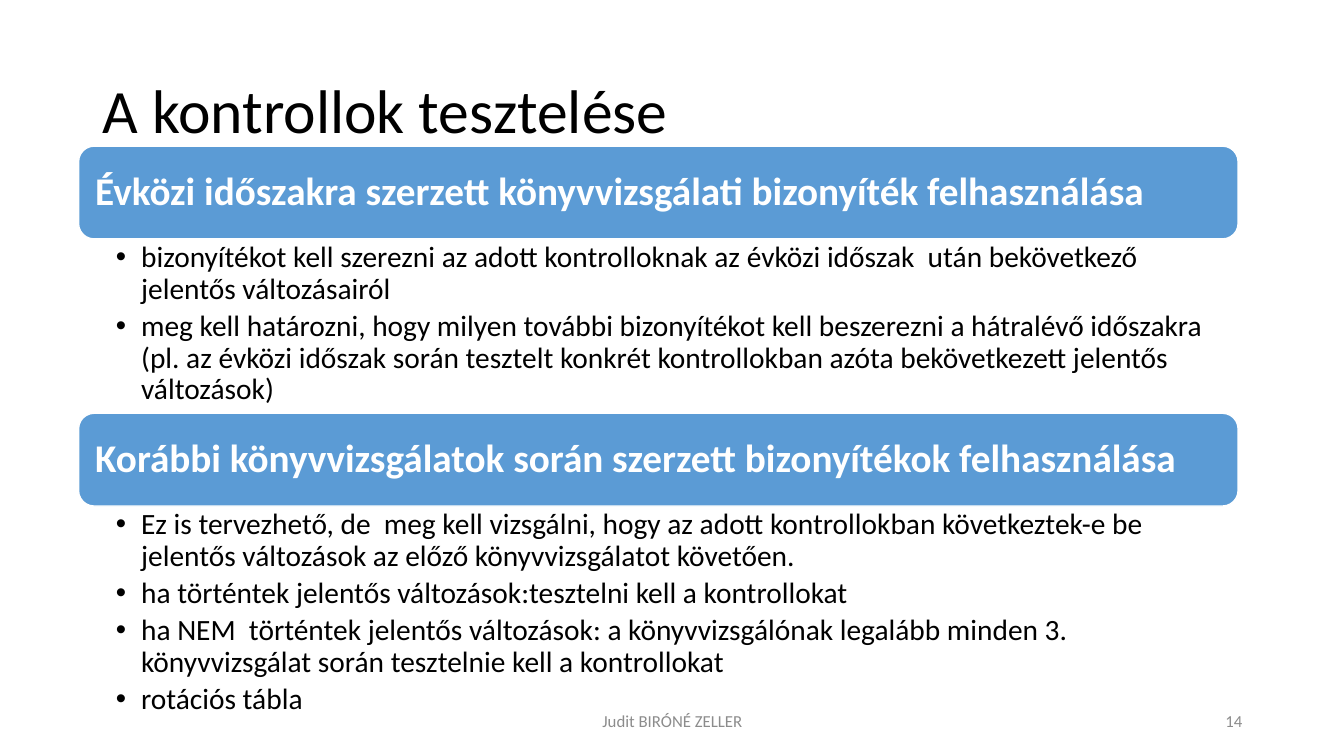
from lxml import etree
from pptx import Presentation
from pptx import util as u
from pptx.dml.color import RGBColor
from pptx.enum import shapes, text
from pptx.oxml.ns import qn

PX = 9144  # 100 px to the inch
LEFT, WIDTH, BAR = 78, 1150, 92
MID = text.MSO_ANCHOR.MIDDLE
ALIGN = text.PP_ALIGN


def color(code):
    return RGBColor.from_string(code)


def write(shape, *lines, size, ink="000000", bold=False, align=ALIGN.LEFT, anchor=MID,
          pad=(10, 5, 10, 5), lead=0.9, after=0, bullet=False):
    """Fill a shape with one paragraph per line; pad is left, top, right, bottom in px."""
    frame = shape.text_frame
    frame.word_wrap = True
    frame.auto_size = text.MSO_AUTO_SIZE.NONE
    frame.vertical_anchor = anchor
    frame.margin_left, frame.margin_top, frame.margin_right, frame.margin_bottom = [
        n * PX for n in pad]
    for i, line in enumerate(lines):
        par = frame.add_paragraph() if i else frame.paragraphs[0]
        par.alignment = align
        par.line_spacing = lead
        par.space_before, par.space_after = u.Pt(0), u.Pt(after)
        run = par.add_run()
        run.text = line
        font = run.font
        font.name, font.size, font.bold = "Calibri", u.Pt(size), bold
        font.color.rgb = color(ink)
        if bullet:
            par.level = 1
            props = par._p.get_or_add_pPr()
            props.set("marL", str(25 * PX))
            props.set("indent", str(-25 * PX))
            etree.SubElement(props, qn("a:buFont"), typeface="Arial")
            etree.SubElement(props, qn("a:buChar"), char="•")


deck = Presentation()
deck.slide_width, deck.slide_height = 1333 * PX, 750 * PX
slide = deck.slides.add_slide(deck.slide_layouts[5])

title = slide.shapes.title
title.left, title.top, title.width, title.height = [n * PX for n in (92, 40, 1150, 145)]
write(title, "A kontrollok tesztelése", size=44)

parts = [
    (145, 173, "Évközi időszakra szerzett könyvvizsgálati bizonyíték felhasználása", [
        "bizonyítékot kell szerezni az adott kontrolloknak az évközi időszak  után "
        "bekövetkező jelentős változásairól",
        "meg kell határozni, hogy milyen további bizonyítékot kell beszerezni a hátralévő "
        "időszakra (pl. az évközi időszak során tesztelt konkrét kontrollokban azóta "
        "bekövetkezett jelentős változások)",
    ]),
    (410, 224, "Korábbi könyvvizsgálatok során szerzett bizonyítékok felhasználása", [
        "Ez is tervezhető, de  meg kell vizsgálni, hogy az adott kontrollokban "
        "következtek-e be jelentős változások az előző könyvvizsgálatot követően.",
        "ha történtek jelentős változások:tesztelni kell a kontrollokat",
        "ha NEM  történtek jelentős változások: a könyvvizsgálónak legalább minden 3. "
        "könyvvizsgálat során tesztelnie kell a kontrollokat",
        "rotációs tábla",
    ]),
]
for top, height, head, points in parts:
    bar = slide.shapes.add_shape(shapes.MSO_SHAPE.ROUNDED_RECTANGLE,
                                 LEFT * PX, top * PX, WIDTH * PX, BAR * PX)
    bar.shadow.inherit = False
    bar.fill.solid()
    bar.fill.fore_color.rgb = color("5B9BD5")
    bar.line.color.rgb = color("FFFFFF")
    bar.line.width = u.Pt(1)
    write(bar, head, size=28, ink="FFFFFF", bold=True, pad=(12, 12, 12, 12))
    body = slide.shapes.add_textbox(LEFT * PX, (top + BAR) * PX, WIDTH * PX, height * PX)
    write(body, *points, size=21, anchor=text.MSO_ANCHOR.TOP, pad=(37, 3, 16, 3),
          after=4, bullet=True)

for left, width, label, align in [(442, 450, "Judit BIRÓNÉ ZELLER", ALIGN.CENTER),
                                  (942, 300, "14", ALIGN.RIGHT)]:
    foot = slide.shapes.add_textbox(left * PX, 695 * PX, width * PX, 40 * PX)
    write(foot, label, size=12, ink="8C8C8C", align=align, lead=1.0)

deck.save("out.pptx")
